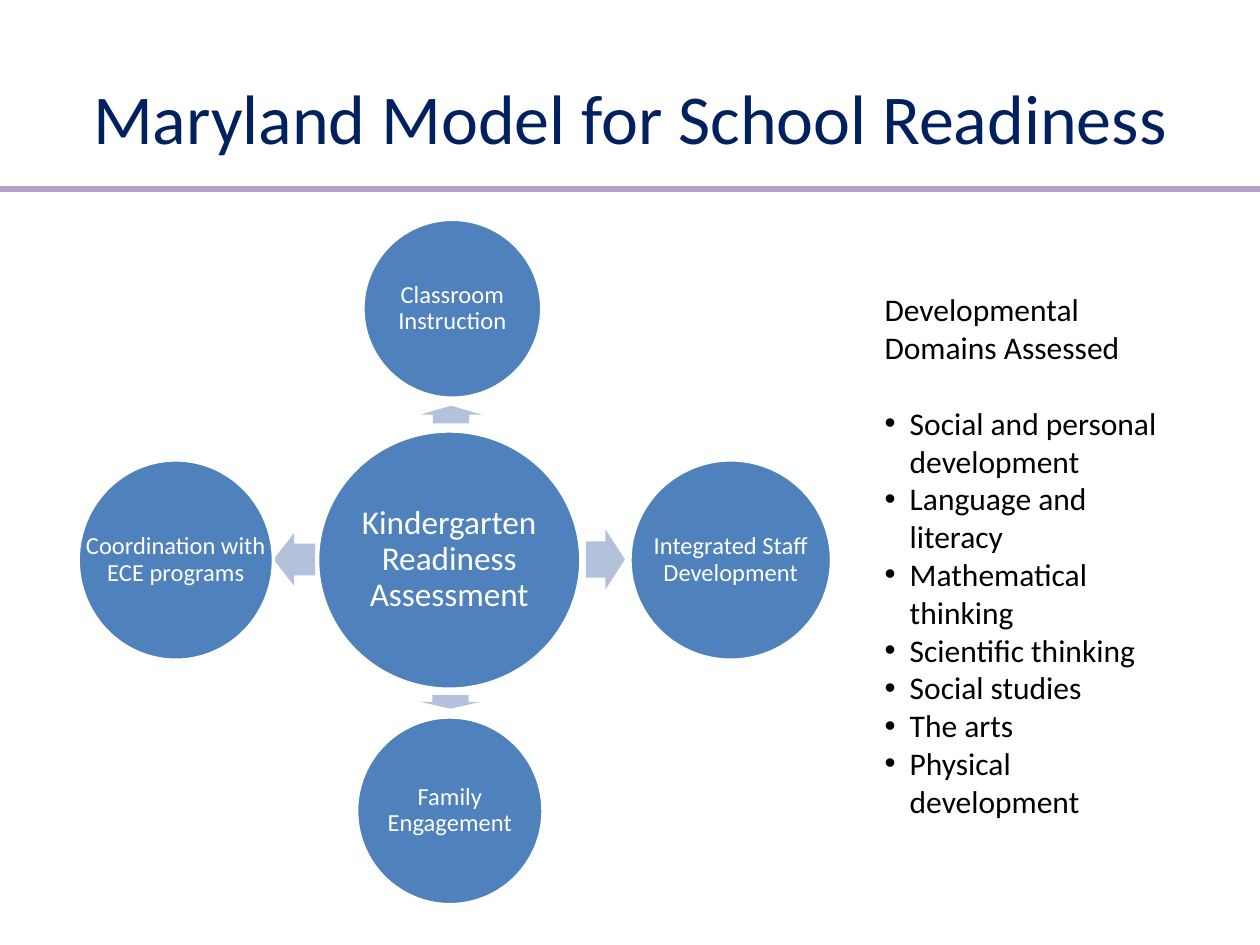
from dataclasses import dataclass

from lxml.etree import SubElement
from pptx import Presentation
from pptx.dml.color import RGBColor
from pptx.enum.shapes import MSO_CONNECTOR as Connector, MSO_SHAPE as Shape
from pptx.enum.text import MSO_ANCHOR as Anchor, MSO_AUTO_SIZE as AutoSize, PP_ALIGN as Align
from pptx.oxml.ns import qn
from pptx.util import Inches, Pt


@dataclass(frozen=True)
class Theme:
    """Colours, font and type sizes of the slide."""
    font: str = "Calibri"
    navy: str = "002060"
    blue: str = "4F81BD"
    pale_blue: str = "B3C1DB"
    lilac: str = "B3A2C7"
    white: str = "FFFFFF"
    black: str = "000000"
    title_size: int = 40
    hub_size: int = 19
    list_size: int = 18
    circle_size: int = 14


THEME = Theme()

CIRCLES = [
    ("Kindergarten\vReadiness\vAssessment", (2.52, 3.42, 2.09, 2.05), THEME.hub_size),
    ("Classroom\vInstruction", (2.88, 1.74, 1.42, 1.42), THEME.circle_size),
    ("Integrated Staff\vDevelopment", (5, 3.65, 1.6, 1.59), THEME.circle_size),
    ("Family\vEngagement", (2.83, 5.69, 1.48, 1.49), THEME.circle_size),
    ("Coordination with\vECE programs", (0.62, 3.65, 1.55, 1.59), THEME.circle_size),
]

ARROWS = [
    ((3.51, 3.05, 0.14, 0.48), 270),
    ((4.65, 4.2, 0.31, 0.48), 0),
    ((3.52, 5.33, 0.11, 0.48), 90),
    ((2.17, 4.23, 0.33, 0.42), 180),
]

DOMAINS = [
    "Social and personal development",
    "Language and literacy",
    "Mathematical thinking",
    "Scientific thinking",
    "Social studies",
    "The arts",
    "Physical development",
]


def apply(target, formats):
    """Set every attribute named in formats on target."""
    for name, value in formats.items():
        setattr(target, name, value)


def place(shape, box):
    """Move and size a shape to a box in inches."""
    apply(shape, dict(zip(("left", "top", "width", "height"), map(Inches, box))))


def write(paragraph, text, size, color, **formats):
    """Fill a paragraph with formatted text."""
    paragraph.text = text
    apply(paragraph, formats)
    for run in paragraph.runs:
        apply(run.font, {"name": THEME.font, "size": Pt(size)})
        run.font.color.rgb = RGBColor.from_string(color)


def set_bullet(paragraph, char=None, indent=0):
    """Give a paragraph a hanging bullet, or none."""
    properties = paragraph._p.get_or_add_pPr()
    properties.set("marL", str(Inches(indent)))
    properties.set("indent", str(Inches(-indent)))
    if char:
        SubElement(properties, qn("a:buChar"), char=char)
    else:
        SubElement(properties, qn("a:buNone"))


def add_filled_shape(slide, kind, box, color):
    """Add a flat preset shape without an outline."""
    shape = slide.shapes.add_shape(kind, *map(Inches, box))
    shape.shadow.inherit = False
    shape.fill.solid()
    shape.fill.fore_color.rgb = RGBColor.from_string(color)
    shape.line.fill.background()
    return shape


def add_circle(slide, text, box, size):
    """Add a labelled circle with a white rim."""
    circle = add_filled_shape(slide, Shape.OVAL, box, THEME.blue)
    circle.line.color.rgb = RGBColor.from_string(THEME.white)
    circle.line.width = Pt(2)
    margins = dict.fromkeys(("margin_left", "margin_right", "margin_top", "margin_bottom"), Inches(0.02))
    apply(circle.text_frame, {"word_wrap": False, "vertical_anchor": Anchor.MIDDLE, **margins})
    write(circle.text_frame.paragraphs[0], text, size, THEME.white,
          alignment=Align.CENTER, line_spacing=0.9)


def add_arrow(slide, box, rotation):
    """Add a block arrow turned away from the hub."""
    arrow = add_filled_shape(slide, Shape.RIGHT_ARROW, box, THEME.pale_blue)
    arrow.adjustments[0], arrow.adjustments[1] = 0.6, 0.5
    arrow.rotation = rotation


def add_rule(slide, top):
    """Add the full-width line under the title."""
    rule = slide.shapes.add_connector(Connector.STRAIGHT, 0, Inches(top), Inches(10), Inches(top))
    rule.line.color.rgb = RGBColor.from_string(THEME.lilac)
    rule.line.width = Pt(3.5)
    SubElement(rule._element.spPr, qn("a:effectLst"))


def fill_title(title, text):
    """Place and format the slide title."""
    place(title, (0.5, 0.3, 9, 1.25))
    title.text_frame.vertical_anchor = Anchor.MIDDLE
    write(title.text_frame.paragraphs[0], text, THEME.title_size, THEME.navy, alignment=Align.CENTER)


def fill_list(body, heading, items):
    """Place the body and write a heading with bullets under it."""
    place(body, (6.92, 2.25, 2.58, 4.34))
    frame = body.text_frame
    apply(frame, {"auto_size": AutoSize.NONE, "word_wrap": True, "vertical_anchor": Anchor.TOP})
    first = frame.paragraphs[0]
    set_bullet(first)
    write(first, heading, THEME.list_size, THEME.black, space_before=Pt(0), space_after=Pt(22))
    for item in items:
        paragraph = frame.add_paragraph()
        set_bullet(paragraph, "•", 0.2)
        write(paragraph, item, THEME.list_size, THEME.black, space_before=Pt(0))


def main():
    """Build the slide and save it."""
    presentation = Presentation()
    apply(presentation, {"slide_width": Inches(10), "slide_height": Inches(7.5)})
    slide = presentation.slides.add_slide(presentation.slide_layouts[1])
    add_rule(slide, 1.5)
    fill_title(slide.shapes.title, "Maryland Model for School Readiness")
    for box, rotation in ARROWS:
        add_arrow(slide, box, rotation)
    for text, box, size in CIRCLES:
        add_circle(slide, text, box, size)
    fill_list(slide.placeholders[1], "Developmental Domains Assessed", DOMAINS)
    presentation.save("out.pptx")


if __name__ == "__main__":
    main()
